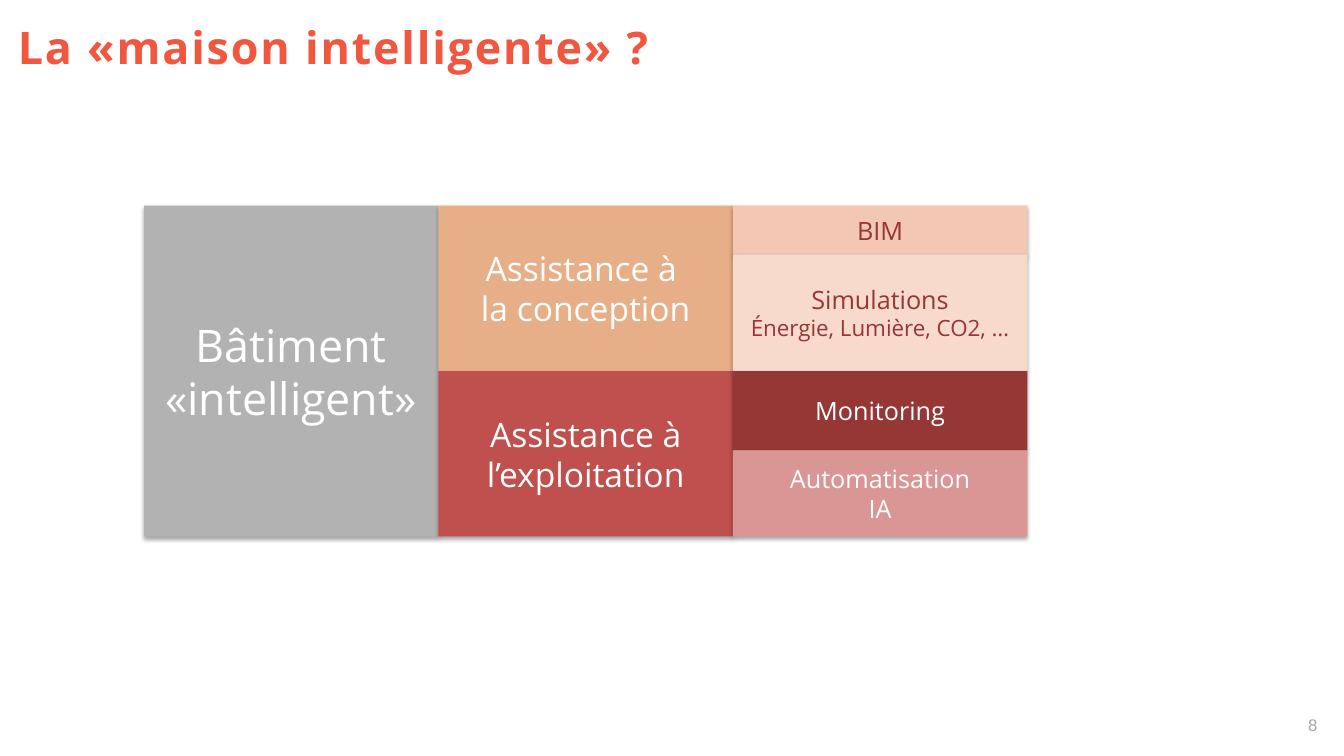
from lxml import etree
from pptx import Presentation
from pptx.dml.color import RGBColor
from pptx.enum.shapes import MSO_SHAPE
from pptx.enum.text import MSO_ANCHOR, PP_ALIGN
from pptx.oxml import parse_xml
from pptx.oxml.ns import nsdecls
from pptx.util import Cm, Pt

TITLE = "La «maison intelligente» ?"
PAGE = "8"
WHITE, MAROON = "FFFFFF", "953735"

# height, fill, text colour, lines of (text, size)
COLUMNS = [
    [(8.34, "B2B2B2", WHITE, [("Bâtiment «intelligent»", 32)])],
    [
        (4.17, "E7AF88", WHITE, [("Assistance à ", 24), ("la conception", 24)]),
        (4.17, "C0504D", WHITE, [("Assistance à l’exploitation", 24)]),
    ],
    [
        (1.23, "F3C7B2", MAROON, [("BIM", 18)]),
        (2.94, "F7DACC", MAROON, [("Simulations", 18), ("Énergie, Lumière, CO2, …", 16)]),
        (2, MAROON, WHITE, [("Monitoring", 18)]),
        (2.17, "D99694", WHITE, [("Automatisation", 18), ("IA", 18)]),
    ],
]
LEFT, TOP, COLUMN_WIDTH = 3.63, 5.18, 7.42

SHADOW = (
    f'<a:outerShdw {nsdecls("a")} blurRad="{Pt(3.1)}" dist="{Pt(1.8)}" dir="5400000" '
    'rotWithShape="0"><a:srgbClr val="000000"><a:alpha val="35000"/></a:srgbClr></a:outerShdw>'
)


def color(value):
    return RGBColor.from_string(value)


def write(frame, lines, font_name, text_color, align):
    frame.word_wrap = True
    frame.vertical_anchor = MSO_ANCHOR.MIDDLE
    paragraph = frame.paragraphs[0]
    paragraph.alignment = align
    paragraph.font.name = font_name
    paragraph.font.color.rgb = color(text_color)
    sizes = {size for _, size in lines}
    if len(sizes) == 1:
        paragraph.font.size = Pt(lines[0][1])
    for index, (text, size) in enumerate(lines):
        if index:
            paragraph.add_line_break()
        run = paragraph.add_run()
        run.text = text
        if len(sizes) > 1:
            run.font.size = Pt(size)
    return paragraph


def add_label(slide, box, *style):
    label = slide.shapes.add_textbox(*map(Cm, box))
    return write(label.text_frame, *style)


def add_block(slide, box, fill, text_color, lines):
    block = slide.shapes.add_shape(MSO_SHAPE.RECTANGLE, *map(Cm, box))
    block.fill.solid()
    block.fill.fore_color.rgb = color(fill)
    block.line.fill.background()
    block.shadow.inherit = False
    block._element.spPr.find("{*}effectLst").append(parse_xml(SHADOW))
    write(block.text_frame, lines, "Open Sans", text_color, PP_ALIGN.CENTER)


def main():
    deck = Presentation()
    deck.slide_width, deck.slide_height = Cm(33.87), Cm(19.05)
    slide = deck.slides.add_slide(deck.slide_layouts[6])

    add_label(slide, (31.52, 17.93, 1.93, 0.66), [(PAGE, 12)], "Arial", "A6A6A6", PP_ALIGN.RIGHT)
    title = add_label(slide, (0.2, 0.3, 30.48, 1.73), [(TITLE, 32)],
                      "Open Sans", "F1563F", PP_ALIGN.LEFT)
    title.font.bold = True
    title.runs[0].font._element.set("spc", "130")

    for index, column in enumerate(COLUMNS):
        top = TOP
        for height, fill, text_color, lines in column:
            box = (LEFT + index * COLUMN_WIDTH, top, COLUMN_WIDTH, height)
            add_block(slide, box, fill, text_color, lines)
            top += height

    deck.save("out.pptx")


if __name__ == "__main__":
    main()
